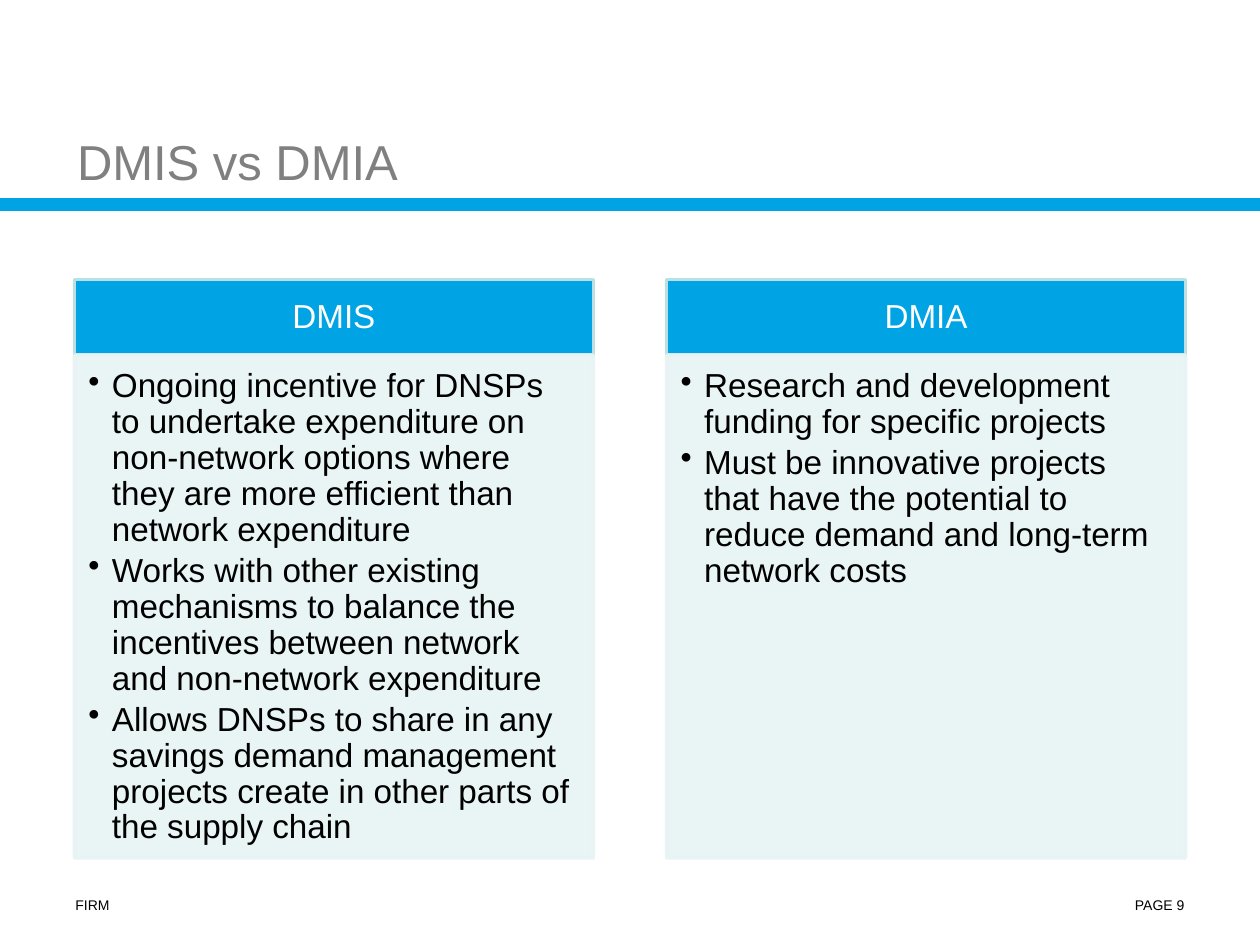
from lxml.etree import SubElement
from pptx import Presentation
from pptx.dml.color import RGBColor
from pptx.enum.shapes import MSO_CONNECTOR, MSO_SHAPE
from pptx.enum.text import MSO_ANCHOR, PP_ALIGN
from pptx.oxml.ns import qn
from pptx.util import Pt

WIDTH, HEIGHT = 720, 540
COLUMN_LEFT, COLUMN_WIDTH, COLUMN_STEP = 42.5, 296.6, 338.4
HEADING_TOP, HEADING_HEIGHT, BODY_HEIGHT = 159.8, 43.2, 287.3

COLUMNS = {
    "DMIS": [
        "Ongoing incentive for DNSPs to undertake expenditure on non-network options "
        "where they are more efficient than network expenditure",
        "Works with other existing mechanisms to balance the incentives between "
        "network and non-network expenditure",
        "Allows DNSPs to share in any savings demand management projects create in "
        "other parts of the supply chain",
    ],
    "DMIA": [
        "Research and development funding for specific projects",
        "Must be innovative projects that have the potential to reduce demand and "
        "long-term network costs",
    ],
}


def color(hex_string):
    return RGBColor.from_string(hex_string)


def add_bullet(paragraph, indent):
    properties = paragraph._p.get_or_add_pPr()
    properties.set("marL", str(Pt(indent)))
    properties.set("indent", str(-Pt(indent)))
    SubElement(properties, qn("a:buChar"), char="•")


def write_text(shape, paragraphs, size=19, ink="000000", font="Arial", align=PP_ALIGN.LEFT,
               anchor=MSO_ANCHOR.TOP, insets=(7.2, 3.6, 7.2, 3.6),
               line_spacing=None, space_after=0, bullet_indent=None):
    """Fill the shape with paragraphs; insets run left, top, right, bottom."""
    frame = shape.text_frame
    frame.word_wrap = True
    frame.vertical_anchor = anchor
    (frame.margin_left, frame.margin_top,
     frame.margin_right, frame.margin_bottom) = map(Pt, insets)
    for index, words in enumerate(paragraphs):
        paragraph = frame.add_paragraph() if index else frame.paragraphs[0]
        paragraph.alignment = align
        paragraph.line_spacing = line_spacing
        paragraph.space_after = Pt(space_after)
        if bullet_indent:
            add_bullet(paragraph, bullet_indent)
        run = paragraph.add_run()
        run.text = words
        run.font.name = font
        run.font.size = Pt(size)
        run.font.color.rgb = color(ink)


class ComparisonSlide:
    accent, heading_edge, panel, gray = "00A4E4", "BBE0E3", "E7F3F4", "808080"

    def __init__(self, slide):
        self.slide = slide

    def label(self, left, top, width, height, words, **text_format):
        box = self.slide.shapes.add_textbox(Pt(left), Pt(top), Pt(width), Pt(height))
        write_text(box, [words], **text_format)

    def rule(self, y, weight):
        line = self.slide.shapes.add_connector(
            MSO_CONNECTOR.STRAIGHT, 0, Pt(y), Pt(WIDTH), Pt(y))
        line.line.color.rgb = color(self.accent)
        line.line.width = Pt(weight)
        SubElement(line._element.spPr, qn("a:effectLst"))

    def block(self, left, top, height, fill, edge, paragraphs, opacity=100, **text_format):
        block = self.slide.shapes.add_shape(
            MSO_SHAPE.RECTANGLE, Pt(left), Pt(top), Pt(COLUMN_WIDTH), Pt(height))
        block.shadow.inherit = False
        block.fill.solid()
        block.fill.fore_color.rgb = color(fill)
        block.line.color.rgb = color(edge)
        block.line.width = Pt(2)
        if opacity < 100:
            for tint in block._element.spPr.iter(qn("a:srgbClr")):
                SubElement(tint, qn("a:alpha"), val=str(opacity * 1000))
        write_text(block, paragraphs, **text_format)

    def column(self, left, heading, points):
        self.block(left, HEADING_TOP, HEADING_HEIGHT, self.accent, self.heading_edge,
                   [heading], ink="FFFFFF", align=PP_ALIGN.CENTER,
                   anchor=MSO_ANCHOR.MIDDLE, insets=(10.8, 5.8, 10.8, 5.8),
                   line_spacing=0.9)
        self.block(left, HEADING_TOP + HEADING_HEIGHT, BODY_HEIGHT, self.panel, self.panel,
                   points, opacity=90, insets=(8, 8, 10.8, 12),
                   line_spacing=0.9, space_after=2.85, bullet_indent=13.5)


def main():
    deck = Presentation()
    deck.slide_width, deck.slide_height = Pt(WIDTH), Pt(HEIGHT)
    page = ComparisonSlide(deck.slides.add_slide(deck.slide_layouts[6]))
    page.rule(116.8, 7.5)
    page.label(36, 509, 168, 37.4, "FIRM", size=8)
    page.label(516, 509, 168, 37.4, "PAGE 9", size=8, align=PP_ALIGN.RIGHT)
    page.label(37, 22.3, 648, 90, "DMIS vs DMIA", size=28, ink=page.gray,
               anchor=MSO_ANCHOR.BOTTOM)
    for index, (heading, points) in enumerate(COLUMNS.items()):
        page.column(COLUMN_LEFT + index * COLUMN_STEP, heading, points)
    deck.save("out.pptx")


if __name__ == "__main__":
    main()
